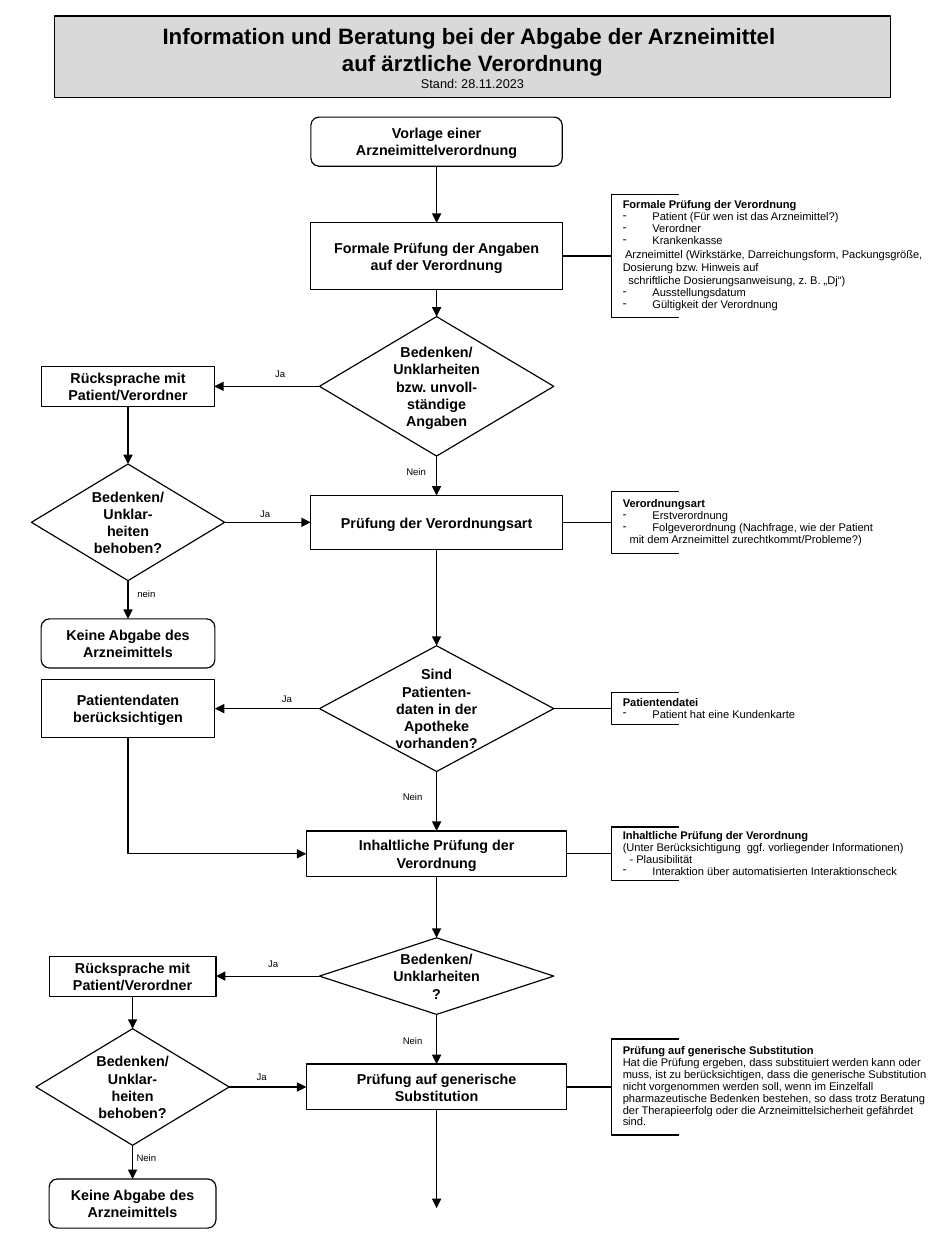
"""Build a one-page flowchart on advising patients when dispensing prescribed medicines."""
from lxml.etree import SubElement
from pptx import Presentation
from pptx.dml.color import RGBColor
from pptx.enum.shapes import MSO_CONNECTOR, MSO_SHAPE
from pptx.enum.text import MSO_ANCHOR, MSO_AUTO_SIZE, PP_ALIGN
from pptx.oxml.ns import qn
from pptx.util import Cm, Inches, Pt

BLACK = RGBColor(0, 0, 0)
WHITE = RGBColor(255, 255, 255)
GREY = RGBColor(0xD9, 0xD9, 0xD9)
FONT = "Arial"
LINE_WIDTH = Pt(0.75)
PAGE_WIDTH, PAGE_HEIGHT = Cm(21), Cm(28)
MAIN, UPPER_SIDE, LOWER_SIDE = 3.82, 1.12, 1.16
NOTE_LEFT, NOTE_WIDTH, BRACKET_WIDTH = 5.35, 2.91, 0.59
LABEL_SIZE = (0.45, 0.19)
FLOW_END = 10.57
TOP, LEFT, BOTTOM, RIGHT = range(4)

TITLE = ("Information und Beratung bei der Abgabe der Arzneimittel \v"
         "auf ärztliche Verordnung")
STATUS = "Stand: 28.11.2023"

ROUNDED = MSO_SHAPE.FLOWCHART_ALTERNATE_PROCESS
PROCESS = MSO_SHAPE.FLOWCHART_PROCESS
DECISION = MSO_SHAPE.FLOWCHART_DECISION

STEPS = {
    "start": (ROUNDED, MAIN, 1.24, 2.2, 0.43, "Vorlage einer Arzneimittelverordnung"),
    "formal": (PROCESS, MAIN, 2.24, 2.2, 0.58, "Formale Prüfung der Angaben auf der Verordnung"),
    "doubts": (DECISION, MAIN, 3.38, 2.05, 1.22,
               "Bedenken/\vUnklarheiten bzw. unvoll-ständige Angaben"),
    "consult": (PROCESS, UPPER_SIDE, 3.38, 1.51, 0.35, "Rücksprache mit Patient/Verordner"),
    "solved": (DECISION, UPPER_SIDE, 4.57, 1.69, 1.02, "Bedenken/\vUnklar-heiten behoben?"),
    "refusal": (ROUNDED, UPPER_SIDE, 5.63, 1.52, 0.43, "Keine Abgabe des Arzneimittels"),
    "kind": (PROCESS, MAIN, 4.57, 2.2, 0.47, "Prüfung der Verordnungsart"),
    "records": (DECISION, MAIN, 6.2, 2.05, 1.1,
                "Sind Patienten-daten in der Apotheke vorhanden?"),
    "use records": (PROCESS, UPPER_SIDE, 6.2, 1.52, 0.51, "Patientendaten berücksichtigen"),
    "content": (PROCESS, MAIN, 7.47, 2.28, 0.4, "Inhaltliche Prüfung der Verordnung"),
    "late doubts": (DECISION, MAIN, 8.54, 2.05, 0.67, "Bedenken/\vUnklarheiten?"),
    "late consult": (PROCESS, LOWER_SIDE, 8.54, 1.46, 0.35, "Rücksprache mit Patient/Verordner"),
    "late solved": (DECISION, LOWER_SIDE, 9.51, 1.69, 1.02, "Bedenken/Unklar-heiten behoben?"),
    "late refusal": (ROUNDED, LOWER_SIDE, 10.53, 1.46, 0.43, "Keine Abgabe des Arzneimittels"),
    "generic": (PROCESS, MAIN, 9.51, 2.28, 0.4, "Prüfung auf generische Substitution"),
}

FLOWS = {
    (BOTTOM, TOP): [("start", "formal"), ("formal", "doubts"), ("doubts", "kind"),
                    ("kind", "records"), ("records", "content"), ("content", "late doubts"),
                    ("late doubts", "generic"), ("consult", "solved"), ("solved", "refusal"),
                    ("late consult", "late solved"), ("late solved", "late refusal")],
    (LEFT, RIGHT): [("doubts", "consult"), ("records", "use records"),
                    ("late doubts", "late consult")],
    (RIGHT, LEFT): [("solved", "kind"), ("late solved", "generic")],
}

LABELS = [("Ja", 2.45, 3.28), ("Nein", 3.64, 4.13), ("Ja", 2.32, 4.5), ("nein", 1.28, 5.2),
          ("Ja", 2.51, 6.12), ("Nein", 3.61, 6.98), ("Ja", 2.39, 8.44), ("Nein", 3.61, 9.11),
          ("Ja", 2.29, 9.43), ("Nein", 1.28, 10.14)]

LINE_STYLES = {"head": (0, 0, 0.9), "plain": (0, 0, 0.9), "dash": (0.26, -0.26, 0.9),
               "inset": (0.06, 0, 0.9), "loose": (0, 0.02, 1.0), "loose inset": (0.05, 0, 1.0)}

NOTES = {
    "formal": (1.09, 1.07, [
        ("head", "Formale Prüfung der Verordnung"),
        ("dash", "Patient (Für wen ist das Arzneimittel?)"),
        ("dash", "Verordner"),
        ("dash", "Krankenkasse"),
        ("loose", "Arzneimittel (Wirkstärke, Darreichungsform, Packungsgröße, "
                  "Dosierung bzw. Hinweis auf"),
        ("loose inset", "schriftliche Dosierungsanweisung, z. B. „Dj“)"),
        ("dash", "Ausstellungsdatum"),
        ("dash", "Gültigkeit der Verordnung")]),
    "kind": (0.52, 0.54, [
        ("head", "Verordnungsart"),
        ("dash", "Erstverordnung"),
        ("dash", "Folgeverordnung (Nachfrage, wie der Patient"),
        ("inset", "mit dem Arzneimittel zurechtkommt/Probleme?)")]),
    "records": (0.31, 0.28, [
        ("head", "Patientendatei"),
        ("dash", "Patient hat eine Kundenkarte")]),
    "content": (0.52, 0.47, [
        ("head", "Inhaltliche Prüfung der Verordnung"),
        ("plain", "(Unter Berücksichtigung  ggf. vorliegender Informationen)"),
        ("inset", "- Plausibilität"),
        ("dash", "Interaktion über automatisierten Interaktionscheck")]),
    "generic": (0.84, 0.84, [
        ("head", "Prüfung auf generische Substitution"),
        ("plain", "Hat die Prüfung ergeben, dass substituiert werden kann oder muss, ist zu "
                  "berücksichtigen, dass die generische Substitution nicht vorgenommen werden "
                  "soll, wenn im Einzelfall pharmazeutische Bedenken bestehen, so dass trotz "
                  "Beratung der Therapieerfolg oder die Arzneimittelsicherheit gefährdet sind.")]),
}


def style_runs(para, size, bold=False):
    for span in para.runs:
        span.font.name, span.font.size, span.font.bold = FONT, Pt(size), bold
        span.font.color.rgb = BLACK


def outline(shape, fill):
    shape.fill.solid()
    shape.fill.fore_color.rgb = fill
    shape.line.color.rgb = BLACK
    shape.line.width = LINE_WIDTH


def centred(x, y, width, height):
    return [Inches(value) for value in (x - width / 2, y - height / 2, width, height)]


def add_title(page):
    title = page.shapes.title
    title.left, title.top, title.width, title.height = map(Inches, (0.48, 0.14, 7.31, 0.71))
    outline(title, GREY)
    frame = title.text_frame
    frame.text = f"{TITLE}\n{STATUS}"
    frame.auto_size, frame.word_wrap = MSO_AUTO_SIZE.NONE, True
    frame.vertical_anchor = MSO_ANCHOR.MIDDLE
    for para, size, bold in zip(frame.paragraphs, (14, 8), (True, False)):
        para.alignment = PP_ALIGN.CENTER
        para.space_before = Pt(0)
        style_runs(para, size, bold)


def add_step(page, kind, x, y, width, height, text):
    step = page.shapes.add_shape(kind, *centred(x, y, width, height))
    step.shadow.inherit = False
    outline(step, WHITE)
    frame = step.text_frame
    frame.text, frame.word_wrap = text, True
    frame.vertical_anchor = MSO_ANCHOR.MIDDLE
    frame.paragraphs[0].alignment = PP_ALIGN.CENTER
    style_runs(frame.paragraphs[0], 9, True)
    return step


def add_line(page, begin, end, arrow=True, kind=MSO_CONNECTOR.STRAIGHT):
    line = page.shapes.add_connector(kind, *map(Inches, begin + end))
    line.line.color.rgb = BLACK
    line.line.width = LINE_WIDTH
    if arrow:
        SubElement(line.line._get_or_add_ln(), qn("a:tailEnd"), type="triangle")
    SubElement(line._element.spPr, qn("a:effectLst"))
    return line


def add_bent_arrow(page, begin, end):
    arrow = add_line(page, begin, end, kind=MSO_CONNECTOR.ELBOW)
    across, down = end[0] - begin[0], end[1] - begin[1]
    arrow.left, arrow.top, arrow.width, arrow.height = centred(
        begin[0] + across / 2, begin[1] + down / 2, down, across)
    properties = arrow._element.spPr
    properties.find(qn("a:prstGeom")).set("prst", "bentConnector2")
    frame = properties.find(qn("a:xfrm"))
    frame.set("rot", str(270 * 60000))
    frame.set("flipH", "1")


def add_note(page, y, step_right, text_height, bracket_height, lines):
    add_line(page, (step_right, y), (NOTE_LEFT, y), arrow=False)
    top, bottom = Inches(y - bracket_height / 2), Inches(y + bracket_height / 2)
    left, right = Inches(NOTE_LEFT), Inches(NOTE_LEFT + BRACKET_WIDTH)
    builder = page.shapes.build_freeform(right, top)
    builder.add_line_segments([(left, top), (left, bottom), (right, bottom)], close=False)
    bracket = builder.convert_to_shape()
    bracket.shadow.inherit = False
    outline(bracket, WHITE)
    bracket.fill.background()
    box = page.shapes.add_textbox(*centred(NOTE_LEFT + NOTE_WIDTH / 2, y, NOTE_WIDTH, text_height))
    frame = box.text_frame
    frame.text, frame.word_wrap = "\n".join(text for _, text in lines), True
    for para, (style, _) in zip(frame.paragraphs, lines):
        margin, indent, para.line_spacing = LINE_STYLES[style]
        properties = para._p.get_or_add_pPr()
        properties.set("marL", str(Inches(margin)))
        properties.set("indent", str(Inches(indent)))
        if style == "dash":
            SubElement(properties, qn("a:buChar"), char="-")
        style_runs(para, 7, style == "head")


def add_label(page, text, x, y):
    frame = page.shapes.add_textbox(*centred(x, y, *LABEL_SIZE)).text_frame
    frame.text, frame.word_wrap = text, True
    para = frame.paragraphs[0]
    para.alignment, para.line_spacing = PP_ALIGN.CENTER, 0.9
    style_runs(para, 6)


def main():
    deck = Presentation()
    deck.slide_width, deck.slide_height = PAGE_WIDTH, PAGE_HEIGHT
    deck.element.sldSz.attrib.pop("type", None)
    page = deck.slides.add_slide(deck.slide_layouts[5])
    add_title(page)
    steps = {name: add_step(page, *step) for name, step in STEPS.items()}
    for (begin_side, end_side), pairs in FLOWS.items():
        for begin, end in pairs:
            arrow = add_line(page, STEPS[begin][1:3], STEPS[end][1:3])
            arrow.begin_connect(steps[begin], begin_side)
            arrow.end_connect(steps[end], end_side)
    add_line(page, (MAIN, steps["generic"].top.inches + STEPS["generic"][4]), (MAIN, FLOW_END))
    records, content = steps["use records"], STEPS["content"]
    add_bent_arrow(page, (UPPER_SIDE, (records.top + records.height) / Inches(1)),
                   (steps["content"].left.inches, content[2]))
    for name, note in NOTES.items():
        _, x, y, width, _, _ = STEPS[name]
        add_note(page, y, x + width / 2, *note)
    for label in LABELS:
        add_label(page, *label)
    deck.save("out.pptx")


if __name__ == "__main__":
    main()
